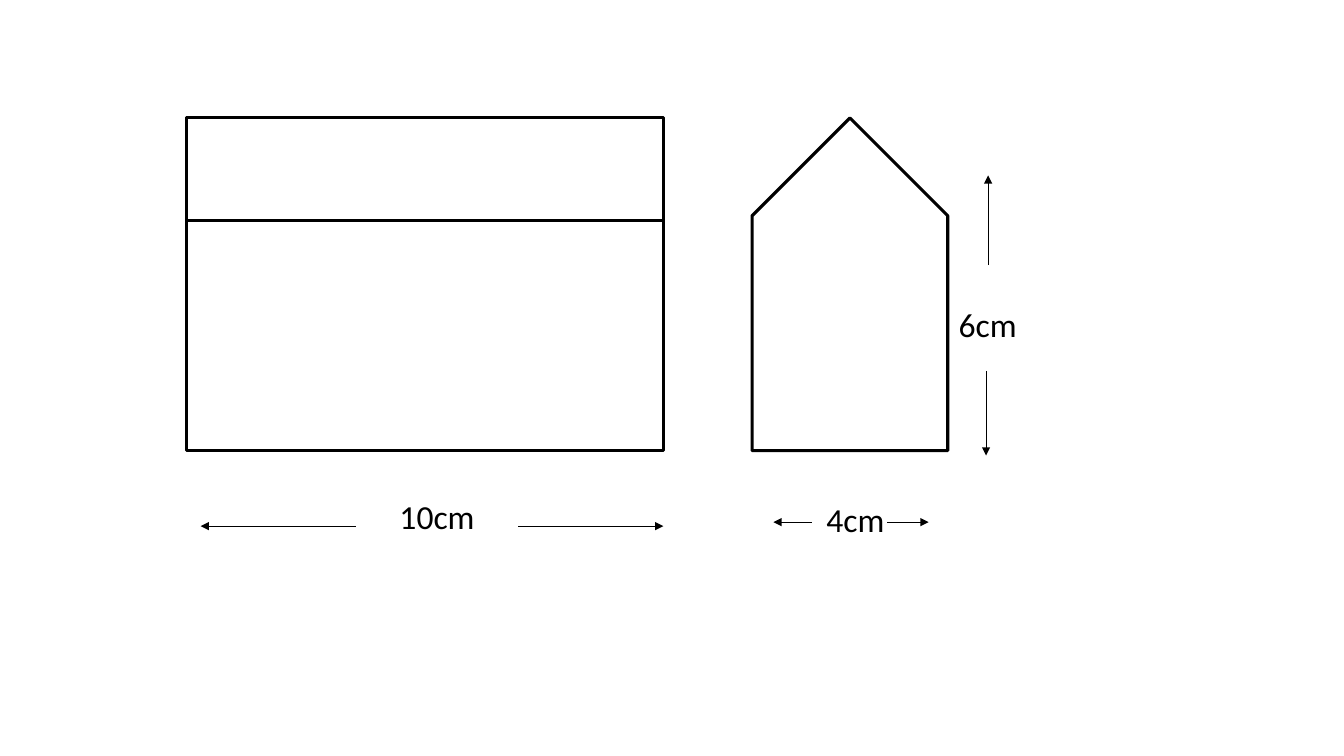
from lxml import etree
from pptx import Presentation
from pptx.dml.color import RGBColor
from pptx.enum.shapes import MSO_CONNECTOR, MSO_SHAPE
from pptx.enum.text import MSO_AUTO_SIZE, PP_ALIGN
from pptx.oxml.ns import qn
from pptx.util import Emu, Pt

PX = 9144  # 100 px to the inch
BLACK = RGBColor(0, 0, 0)
WHITE = RGBColor(255, 255, 255)
STRAIGHT = MSO_CONNECTOR.STRAIGHT
RECTANGLE = MSO_SHAPE.RECTANGLE
PENTAGON = MSO_SHAPE.PENTAGON
CENTER = PP_ALIGN.CENTER
GROW = MSO_AUTO_SIZE.SHAPE_TO_FIT_TEXT

OUTLINE_WIDTH = Pt(2.25)
ARROW_WIDTH = Pt(0.5)
LABEL_FONT = {"name": "Calibri", "size": Pt(24)}
LABEL_HEIGHT = 65


def px(*lengths):
    return [Emu(length * PX) for length in lengths]


def add_line(slide, start, end, width, arrow=False):
    line = slide.shapes.add_connector(STRAIGHT, *px(*start, *end))
    line.line.color.rgb = BLACK
    line.line.width = width
    if arrow:
        etree.SubElement(line.line._get_or_add_ln(), qn("a:tailEnd"), type="triangle")
    etree.SubElement(line._element.spPr, qn("a:effectLst"))


def add_outline(slide, kind, left, top, width, height):
    shape = slide.shapes.add_shape(kind, *px(left, top, width, height))
    shape.shadow.inherit = False
    shape.fill.solid()
    shape.fill.fore_color.rgb = WHITE
    shape.line.color.rgb = BLACK
    shape.line.width = OUTLINE_WIDTH
    return shape


def add_side_view(slide, left, top, width, height, roof_height):
    add_outline(slide, RECTANGLE, left, top, width, height)
    eaves = top + roof_height
    add_line(slide, (left, eaves), (left + width, eaves), OUTLINE_WIDTH)


def add_end_view(slide, left, top, width, height):
    """Place a pentagon in the box, turned so that its tip points up."""
    shift = (height - width) // 2
    gable = add_outline(slide, PENTAGON, left - shift, top + shift, height, width)
    gable.rotation = 270


def add_dimension(slide, text, left, top, width, arrows):
    """Write a measurement and draw the arrows (start, end) that lead away from it."""
    box = slide.shapes.add_textbox(*px(left, top, width, LABEL_HEIGHT))
    frame = box.text_frame
    frame.word_wrap = True
    frame.auto_size = GROW
    paragraph = frame.paragraphs[0]
    paragraph.alignment = CENTER
    run = paragraph.add_run()
    run.text = text
    for name, value in LABEL_FONT.items():
        setattr(run.font, name, value)
    run.font.color.rgb = BLACK
    for start, end in arrows:
        add_line(slide, start, end, ARROW_WIDTH, arrow=True)


def main():
    presentation = Presentation()
    presentation.slide_width, presentation.slide_height = px(1333, 750)
    blank_layout = presentation.slide_layouts[6]
    slide = presentation.slides.add_slide(blank_layout)

    add_side_view(slide, 185, 117, 473, 330, roof_height=102)
    add_end_view(slide, 746, 117, 194, 330)

    add_dimension(slide, "10cm", 353, 487, 161,
                  [((514, 522), (658, 522)), ((353, 522), (199, 522))])
    add_dimension(slide, "4cm", 798, 490, 101,
                  [((880, 518), (921, 518)), ((805, 518), (767, 518))])
    add_dimension(slide, "6cm", 929, 297, 101,
                  [((980, 263), (980, 174)), ((978, 368), (978, 452))])

    presentation.save("out.pptx")


if __name__ == "__main__":
    main()
